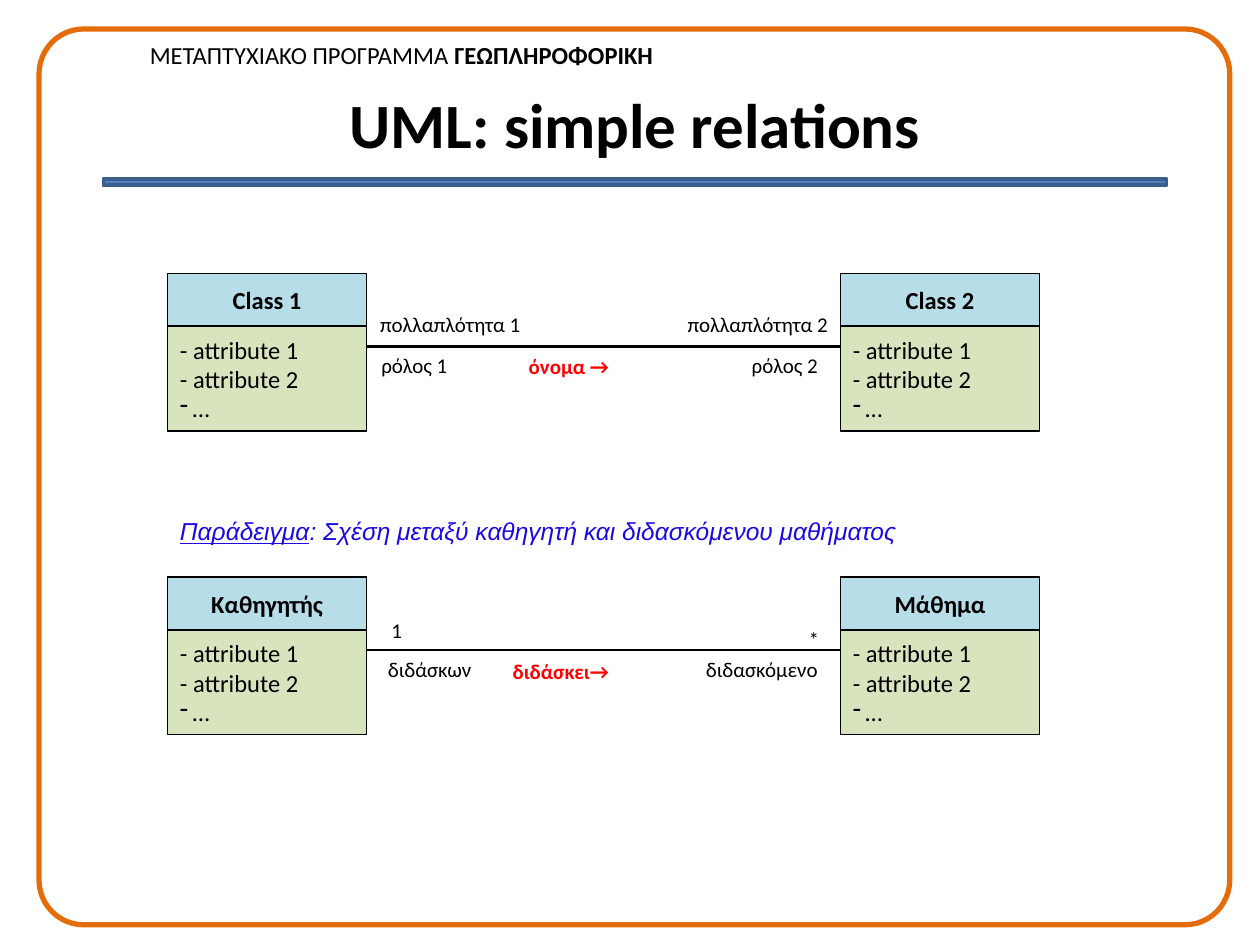
from lxml.etree import SubElement
from pptx import Presentation
from pptx.dml.color import RGBColor
from pptx.enum.shapes import MSO_CONNECTOR, MSO_SHAPE
from pptx.enum.text import MSO_ANCHOR, PP_ALIGN
from pptx.oxml.ns import qn
from pptx.util import Inches, Pt

COLORS = {
    "text": "000000",
    "header": "B7DEE8",
    "body": "D7E4BD",
    "frame": "E46C0A",
    "rule": "4F81BD",
    "rule_edge": "3A5F8C",
    "name": "FF0000",
    "example": "1A0BDF",
}
CLASS_WIDTH, HEADER_HEIGHT, BODY_HEIGHT = 1.58, 0.42, 0.83
LEFT_CLASS, RIGHT_CLASS = 1.33, 6.67
LABEL_HEIGHT = 0.3
ATTRIBUTES = ["- attribute 1", "- attribute 2", "…"]


class DiagramSlide:
    def __init__(self, slide, font="Calibri"):
        self.slide = slide
        self.font = font

    def color(self, key):
        return RGBColor.from_string(COLORS[key])

    def style(self, run, size, color="text", bold=False, italic=False, underline=False, font=None):
        run.font.name = font or self.font
        run.font.size = Pt(size)
        run.font.color.rgb = self.color(color)
        run.font.bold = bold
        run.font.italic = italic
        run.font.underline = underline

    def text(self, box, parts, align=PP_ALIGN.LEFT, wrap=False, anchor=MSO_ANCHOR.TOP):
        frame = self.slide.shapes.add_textbox(*map(Inches, box)).text_frame
        frame.word_wrap = wrap
        frame.vertical_anchor = anchor
        paragraph = frame.paragraphs[0]
        paragraph.alignment = align
        for words, look in parts:
            run = paragraph.add_run()
            run.text = words
            self.style(run, **look)

    def label(self, left, top, width, words, **look):
        self.text((left, top, width, LABEL_HEIGHT), [(words, {"size": 12, **look})], PP_ALIGN.RIGHT)

    def shape(self, parent, kind, box, fill, edge="text", weight=1):
        shape = parent.add_shape(kind, *map(Inches, box))
        shape.shadow.inherit = False
        if fill:
            shape.fill.solid()
            shape.fill.fore_color.rgb = self.color(fill)
        else:
            shape.fill.background()
        shape.line.color.rgb = self.color(edge)
        shape.line.width = Pt(weight)
        return shape

    def compartment(self, parent, box, fill, lines, align, bold=False):
        shape = self.shape(parent, MSO_SHAPE.RECTANGLE, box, fill)
        frame = shape.text_frame
        frame.vertical_anchor = MSO_ANCHOR.MIDDLE
        frame.text = "\n".join(lines)
        for paragraph in frame.paragraphs:
            paragraph.alignment = align
            self.style(paragraph.runs[0], 14, bold=bold)
        return frame

    def uml_class(self, left, top, name):
        group = self.slide.shapes.add_group_shape().shapes
        self.compartment(group, (left, top, CLASS_WIDTH, HEADER_HEIGHT), "header",
                         [name], PP_ALIGN.CENTER, bold=True)
        body = self.compartment(group, (left, top + HEADER_HEIGHT, CLASS_WIDTH, BODY_HEIGHT),
                                "body", ATTRIBUTES, PP_ALIGN.LEFT)
        self.bullet(body.paragraphs[-1], "-")

    def bullet(self, paragraph, character):
        properties = paragraph._p.get_or_add_pPr()
        properties.set("marL", str(Inches(0.1)))
        properties.set("indent", str(Inches(-0.1)))
        SubElement(properties, qn("a:buChar"), char=character)

    def association(self, y):
        ends = (LEFT_CLASS + CLASS_WIDTH, y, RIGHT_CLASS, y)
        line = self.slide.shapes.add_connector(MSO_CONNECTOR.STRAIGHT, *map(Inches, ends))
        line.line.color.rgb = self.color("text")
        line.line.width = Pt(1.25)
        SubElement(line._element.spPr, qn("a:effectLst"))

    def relation(self, top, line_y, classes, labels, name):
        for left, class_name in zip((LEFT_CLASS, RIGHT_CLASS), classes):
            self.uml_class(left, top, class_name)
        self.association(line_y)
        for label in labels:
            self.label(*label)
        self.label(*name, color="name", bold=True)


def main():
    presentation = Presentation()
    presentation.slide_width = Inches(10)
    presentation.slide_height = Inches(7.5)
    diagram = DiagramSlide(presentation.slides.add_slide(presentation.slide_layouts[6]))
    shapes = diagram.slide.shapes

    diagram.text((1.09, 0.27, 4.28, 0.34), [
        ("ΜΕΤΑΠΤΥΧΙΑΚΟ ΠΡΟΓΡΑΜΜΑ ", {"size": 14}),
        ("ΓΕΩΠΛΗΡΟΦΟΡΙΚΗ", {"size": 14, "bold": True}),
    ])
    diagram.shape(shapes, MSO_SHAPE.RECTANGLE, (0.82, 1.42, 8.44, 0.05), "rule", "rule_edge", 2)
    frame = diagram.shape(shapes, MSO_SHAPE.ROUNDED_RECTANGLE, (0.31, 0.23, 9.45, 7.11),
                          None, "frame", 3)
    frame.adjustments[0] = 0.05
    diagram.text((0.54, 0.5, 9, 0.95), [("UML: simple relations", {"size": 36, "bold": True})],
                 PP_ALIGN.CENTER, True, MSO_ANCHOR.MIDDLE)

    diagram.relation(2.17, 2.75, ("Class 1", "Class 2"), [
        (2.9, 2.42, 1.33, "πολλαπλότητα 1"),
        (5.34, 2.42, 1.33, "πολλαπλότητα 2"),
        (2.92, 2.75, 0.73, "ρόλος 1"),
        (5.86, 2.75, 0.73, "ρόλος 2"),
    ], (4.07, 2.76, 0.9, "όνομα → "))
    diagram.relation(4.58, 5.16, ("Καθηγητής", "Μάθημα"), [
        (3, 4.85, 0.29, "1"),
        (6.31, 4.92, 0.29, "*"),
        (2.97, 5.16, 0.87, "διδάσκων"),
        (5.49, 5.16, 1.1, "διδασκόμενο"),
    ], (3.95, 5.18, 1.02, "διδάσκει→ "))

    example = {"size": 14, "color": "example", "italic": True, "font": "Arial"}
    diagram.text((1.33, 4.05, 6.05, 0.34), [
        ("Παράδειγμα", {**example, "underline": True}),
        (": Σχέση μεταξύ καθηγητή και διδασκόμενου μαθήματος", example),
    ])
    presentation.save("out.pptx")


if __name__ == "__main__":
    main()
